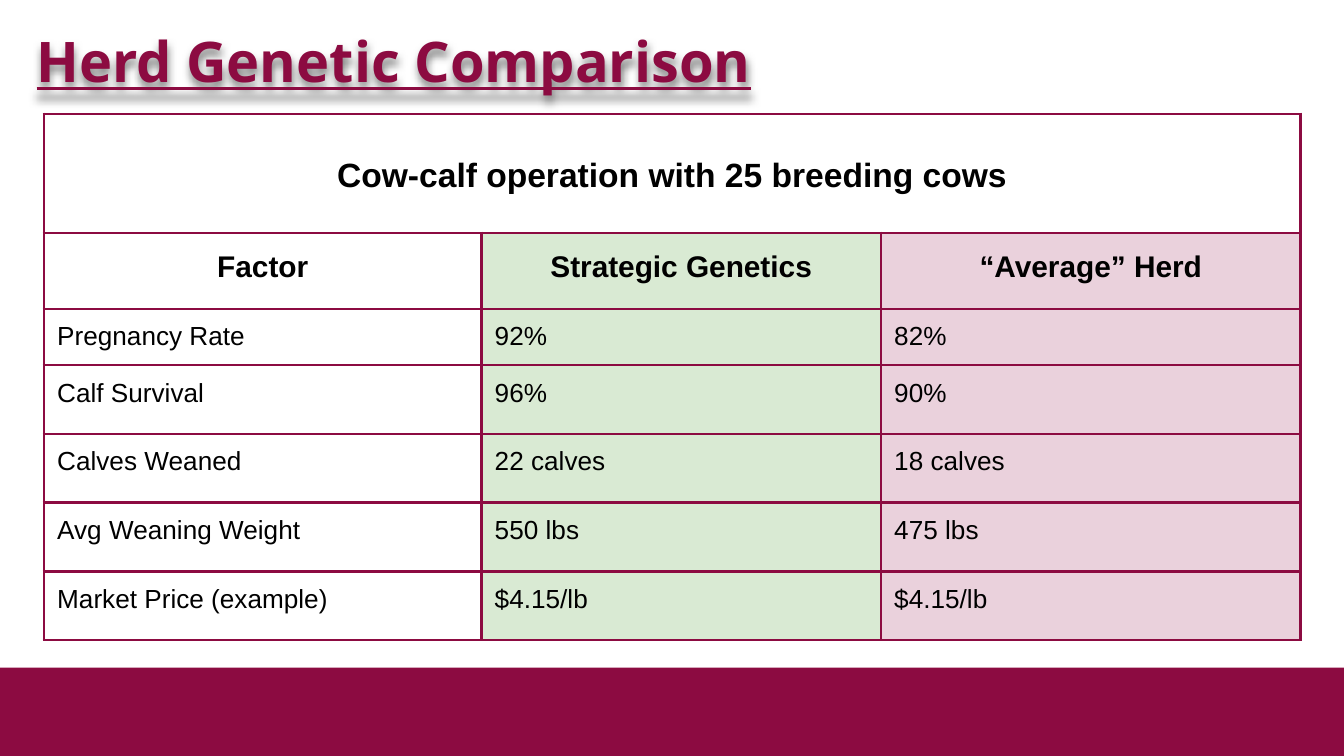
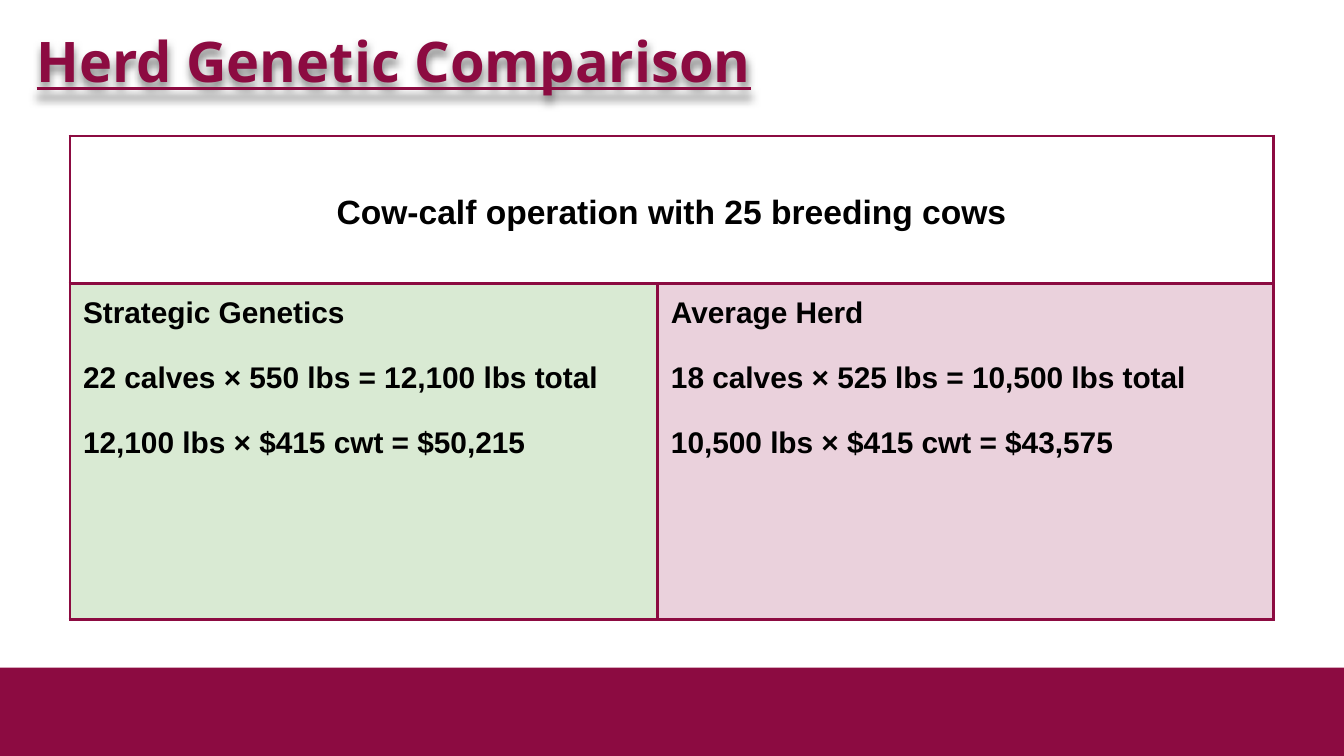
import pptx
import pptx.dml.color
import pptx.enum.shapes
import pptx.enum.text
import pptx.oxml
import pptx.oxml.ns
import pptx.util

Cm = pptx.util.Cm
Pt = pptx.util.Pt
RGBColor = pptx.dml.color.RGBColor
ALIGN = pptx.enum.text.PP_ALIGN
ANCHOR = pptx.enum.text.MSO_ANCHOR

MAROON = RGBColor(0x8C, 0x0B, 0x41)
GREEN = RGBColor(0xD9, 0xEA, 0xD3)
PINK = RGBColor(0xEA, 0xD1, 0xDC)
BLACK = RGBColor(0, 0, 0)

SLIDE_WIDTH, SLIDE_HEIGHT = 25.4, 14.29
BAND_TOP = 12.62
CELL_MARGIN = 0.25
TITLE = "Herd Genetic Comparison"
CAPTION = "Cow-calf operation with 25 breeding cows"

FACTORS = {
    "left": 0.83, "top": 2.15,
    "columns": [8.27, 7.55, 7.93],
    "rows": [2.25, 1.44, 1.06] + [1.3] * 4,
    "fills": [None, GREEN, PINK],
    "cells": [
        ("Factor", "Strategic Genetics", "“Average” Herd"),
        ("Pregnancy Rate", "92%", "82%"),
        ("Calf Survival", "96%", "90%"),
        ("Calves Weaned", "22 calves", "18 calves"),
        ("Avg Weaning Weight", "550 lbs", "475 lbs"),
        ("Market Price (example)", "$4.15/lb", "$4.15/lb"),
    ],
}
REVENUE = {
    "left": 1.32, "top": 2.57,
    "columns": [11.11, 11.64],
    "rows": [2.79, 1.78, 1.32, 3.25],
    "fills": [GREEN, PINK],
    "cells": [
        ("Strategic Genetics",
         "22 calves × 550 lbs = 12,100 lbs total",
         "12,100 lbs × $415 cwt = $50,215"),
        ("Average Herd",
         "18 calves × 525 lbs = 10,500 lbs total",
         "10,500 lbs × $415 cwt = $43,575"),
    ],
}

NAMESPACE = pptx.oxml.ns.nsdecls("a")
SHADOW = (
    f'<a:effectLst {NAMESPACE}><a:outerShdw blurRad="57150" dist="38100" dir="5400000" '
    'algn="bl" rotWithShape="0"><a:srgbClr val="000000"><a:alpha val="50000"/>'
    '</a:srgbClr></a:outerShdw></a:effectLst>'
)


def write(frame, *lines, size, font="Arial", color=BLACK, bold=False, underline=False,
          align=ALIGN.LEFT, spacing=1.0, gap=0):
    for index, line in enumerate(lines):
        paragraph = frame.add_paragraph() if index else frame.paragraphs[0]
        paragraph.text = line
        paragraph.alignment = align
        paragraph.line_spacing = spacing
        paragraph.space_before = Pt(gap if index else 0)
        paragraph.font.name = font
        paragraph.font.size = Pt(size)
        paragraph.font.bold = bold
        paragraph.font.underline = underline
        paragraph.font.color.rgb = color


def add_band(slide, layout):
    band = slide.shapes.add_shape(
        pptx.enum.shapes.MSO_SHAPE.RECTANGLE,
        Cm(0), Cm(BAND_TOP), Cm(SLIDE_WIDTH), Cm(SLIDE_HEIGHT - BAND_TOP))
    band.shadow.inherit = False
    band.fill.solid()
    band.fill.fore_color.rgb = MAROON
    band.line.fill.background()
    layout.shapes.element.append(band.element)


def add_title(slide):
    title = slide.shapes.title
    title.left, title.top = Cm(0.51), Cm(0.51)
    title.width, title.height = Cm(24.38), Cm(1.9)
    title.fill.background()
    title.element.spPr.append(pptx.oxml.parse_xml(SHADOW))
    frame = title.text_frame
    frame.word_wrap = True
    frame.auto_size = pptx.enum.text.MSO_AUTO_SIZE.NONE
    frame.vertical_anchor = ANCHOR.TOP
    frame.margin_left = frame.margin_right = Cm(0.18)
    frame.margin_top = frame.margin_bottom = Cm(0.09)
    write(frame, TITLE, size=30, font="Open Sans", color=MAROON, bold=True,
          underline=True, spacing=0.95)


def format_cell(cell, fill):
    cell.margin_left = cell.margin_right = Cm(CELL_MARGIN)
    cell.margin_top = cell.margin_bottom = Cm(CELL_MARGIN)
    if fill is None:
        cell.fill.background()
    else:
        cell.fill.solid()
        cell.fill.fore_color.rgb = fill
    properties = cell._tc.get_or_add_tcPr()
    for index, side in enumerate("LRTB"):
        properties.insert(index, pptx.oxml.parse_xml(
            f'<a:ln{side} {NAMESPACE} w="{Pt(1.5)}"><a:solidFill>'
            f'<a:srgbClr val="{MAROON}"/></a:solidFill></a:ln{side}>'))


def add_table(slide, content):
    columns, rows = content["columns"], content["rows"]
    table = slide.shapes.add_table(
        len(rows), len(columns), Cm(content["left"]), Cm(content["top"]),
        Cm(sum(columns)), Cm(sum(rows))).table
    table.first_row = table.horz_banding = False
    for column, width in zip(table.columns, columns):
        column.width = Cm(width)
    for row_index, height in enumerate(rows):
        table.rows[row_index].height = Cm(height)
        for column_index, fill in enumerate(content["fills"]):
            format_cell(table.cell(row_index, column_index), fill if row_index else None)
    caption = table.cell(0, 0)
    caption.merge(table.cell(0, len(columns) - 1))
    caption.vertical_anchor = ANCHOR.MIDDLE
    write(caption.text_frame, CAPTION, size=18, bold=True, align=ALIGN.CENTER, spacing=1.15)
    return table


def fill_factors(table):
    header = {"size": 16, "bold": True, "align": ALIGN.CENTER, "spacing": 1.15}
    for row_index, texts in enumerate(FACTORS["cells"], start=1):
        style = header if row_index == 1 else {"size": 14}
        for column_index, text in enumerate(texts):
            write(table.cell(row_index, column_index).text_frame, text, **style)


def fill_revenue(table):
    last_row = len(REVENUE["rows"]) - 1
    for column_index, lines in enumerate(REVENUE["cells"]):
        cell = table.cell(1, column_index)
        cell.merge(table.cell(last_row, column_index))
        write(cell.text_frame, *lines, size=16, bold=True, gap=17)


def main():
    presentation = pptx.Presentation()
    presentation.slide_width = Cm(SLIDE_WIDTH)
    presentation.slide_height = Cm(SLIDE_HEIGHT)
    layout = presentation.slide_layouts[5]
    for content, fill_table in ((FACTORS, fill_factors), (REVENUE, fill_revenue)):
        slide = presentation.slides.add_slide(layout)
        add_title(slide)
        fill_table(add_table(slide, content))
    add_band(slide, layout)
    presentation.save("out.pptx")


if __name__ == "__main__":
    main()
